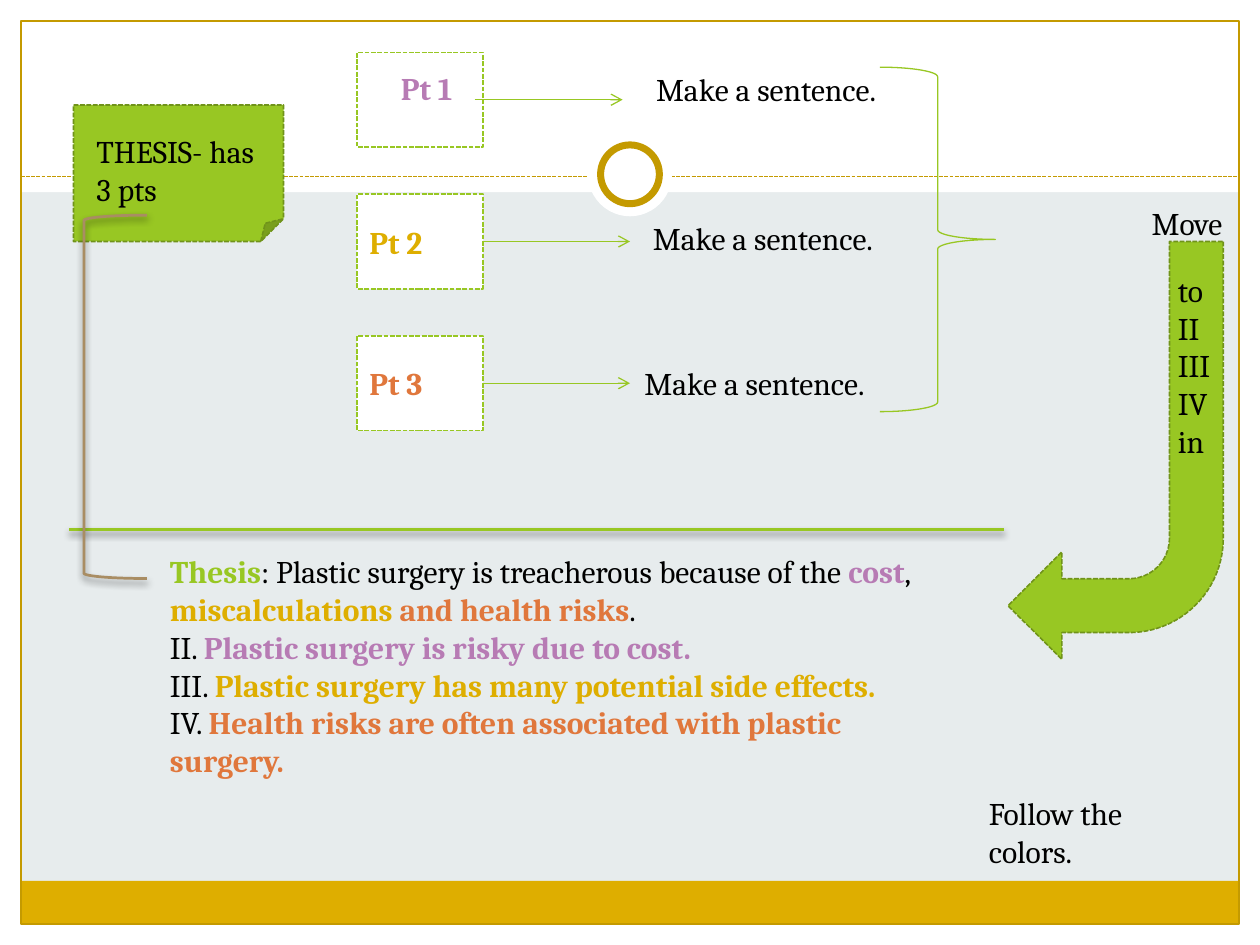
from lxml.etree import SubElement
from pptx import Presentation
from pptx.dml.color import RGBColor
from pptx.enum.dml import MSO_LINE
from pptx.enum.shapes import MSO_CONNECTOR, MSO_SHAPE as SHAPE
from pptx.enum.text import MSO_ANCHOR as ANCHOR, MSO_AUTO_SIZE as AUTO_SIZE, PP_ALIGN
from pptx.oxml.ns import qn
from pptx.util import Emu, Pt

EMU_PER_PX = 7620
FONT = "Cambria"
BLACK, WHITE, PALE = "000000", "FFFFFF", "E7ECED"
GREEN, DARK_GREEN, TAN = "98C723", "70931A", "A98D63"
GOLD, DARK_GOLD = "DEAE00", "C49A00"
PURPLE, ORANGE = "B77BB4", "E0773C"


def px(length):
    return Emu(length * EMU_PER_PX)


def colour(code):
    return RGBColor.from_string(code)


def style_line(line, code, width, dashed=False):
    line.color.rgb = colour(code)
    line.width = Pt(width)
    if dashed:
        line.dash_style = MSO_LINE.SQUARE_DOT


def add_soft_shadow(effects):
    shadow = SubElement(effects, qn("a:outerShdw"), blurRad=str(Pt(4)), dist=str(Pt(2)),
                        dir="5400000", rotWithShape="0")
    black = SubElement(shadow, qn("a:srgbClr"), val=BLACK)
    SubElement(black, qn("a:alpha"), val="45000")


def add_figure(slide, kind, box, fill=None, line=None, width=0.75, dashed=False,
               rotation=0, shadow=False):
    figure = slide.shapes.add_shape(kind, *map(px, box))
    figure.rotation = rotation
    if fill:
        figure.fill.solid()
        figure.fill.fore_color.rgb = colour(fill)
    else:
        figure.fill.background()
    if line:
        style_line(figure.line, line, width, dashed)
    else:
        figure.line.fill.background()
    figure.shadow.inherit = False
    if shadow:
        add_soft_shadow(figure._element.spPr.find(qn("a:effectLst")))
    return figure


def add_rule(slide, left, right, y, code, width=0.75, dashed=False, arrow=False, shadow=False):
    rule = slide.shapes.add_connector(MSO_CONNECTOR.STRAIGHT, px(left), px(y), px(right), px(y))
    style_line(rule.line, code, width, dashed)
    if arrow:
        SubElement(rule.line._get_or_add_ln(), qn("a:tailEnd"), type="arrow")
    effects = SubElement(rule._element.spPr, qn("a:effectLst"))
    if shadow:
        add_soft_shadow(effects)


def write(frame, paragraphs, size=18, anchor=ANCHOR.TOP):
    frame.word_wrap = True
    frame.vertical_anchor = anchor
    for index, pieces in enumerate(paragraphs):
        paragraph = frame.paragraphs[0] if index == 0 else frame.add_paragraph()
        paragraph.alignment = PP_ALIGN.LEFT
        for words, code in pieces:
            if words == "\n":
                paragraph.add_line_break()
                continue
            run = paragraph.add_run()
            run.text = words
            run.font.name = FONT
            run.font.size = Pt(size)
            run.font.bold = code != BLACK
            run.font.color.rgb = colour(code)


def add_text(slide, box, *paragraphs):
    frame = slide.shapes.add_textbox(*map(px, box)).text_frame
    write(frame, paragraphs)
    frame.auto_size = AUTO_SIZE.SHAPE_TO_FIT_TEXT


def add_backdrop(slide):
    slide.background.fill.solid()
    slide.background.fill.fore_color.rgb = colour(PALE)
    margins = [(0, 880, 1200, 20), (0, 0, 1200, 183), (0, 0, 20, 900), (1180, 0, 20, 900)]
    for margin in margins:
        add_figure(slide, SHAPE.RECTANGLE, margin, fill=WHITE)
    add_figure(slide, SHAPE.RECTANGLE, (20, 839, 1160, 41), fill=GOLD)
    add_figure(slide, SHAPE.RECTANGLE, (20, 20, 1160, 860), line=DARK_GOLD)
    add_rule(slide, 20, 1180, 168, DARK_GOLD, dashed=True)
    add_figure(slide, SHAPE.OVAL, (560, 126, 80, 80), fill=WHITE)
    add_figure(slide, SHAPE.OVAL, (572, 138, 56, 56), fill=WHITE, line=DARK_GOLD, width=4)


def add_points(slide):
    box_height, pitch = 90, 135
    points = [
        ("Pt 1", PURPLE, 452, 593, (613, 61)),
        ("Pt 2", GOLD, 460, 600, (610, 203)),
        ("Pt 3", ORANGE, 460, 600, (602, 341)),
    ]
    for index, (label, code, start, end, sentence_at) in enumerate(points):
        top = 50 + index * pitch
        point = add_figure(slide, SHAPE.RECTANGLE, (340, top, 120, box_height),
                           fill=WHITE, line=GREEN, width=0.9, dashed=True)
        if index == 0:
            add_text(slide, (370, 60, 130, 48), [(label, code)])
        else:
            write(point.text_frame, [[(label, code)]], anchor=ANCHOR.MIDDLE)
        add_rule(slide, start, end, top + box_height // 2, GREEN, arrow=True)
        add_text(slide, (*sentence_at, 450, 48), [("Make a sentence.", BLACK)])
    add_figure(slide, SHAPE.LEFT_BRACE, (838, 64, 110, 328), line=GREEN, rotation=180)


def add_move_arrow(slide):
    add_figure(slide, SHAPE.BENT_ARROW, (960, 230, 205, 398), fill=GREEN, line=DARK_GREEN,
               width=0.9, dashed=True, rotation=180)
    add_text(slide, (1085, 188, 110, 48), [("Move", BLACK)])
    add_text(slide, (1110, 252, 70, 230),
             *[[(words, BLACK)] for words in ("to II", "III IV", "in")])


def add_example(slide):
    add_rule(slide, 66, 956, 504, GREEN, width=1.57, shadow=True)
    add_text(
        slide, (150, 520, 743, 266),
        [("Thesis", GREEN), (": Plastic surgery is treacherous because of the ", BLACK),
         ("cost", PURPLE), (", ", BLACK), ("miscalculations ", GOLD),
         ("and health risks", ORANGE), (".", BLACK)],
        [("II. ", BLACK), ("Plastic surgery is risky due to cost. ", PURPLE), ("\n", BLACK),
         ("III. ", BLACK), ("Plastic surgery has many potential side effects.", GOLD)],
        [("IV. ", BLACK),
         ("Health risks are often associated with plastic surgery.", ORANGE)],
    )
    add_figure(slide, SHAPE.LEFT_BRACKET, (80, 205, 60, 346), line=TAN, width=1.57, shadow=True)
    add_text(slide, (930, 750, 235, 85), [("Follow the colors.", BLACK)])


def main():
    deck = Presentation()
    deck.slide_width, deck.slide_height = px(1200), px(900)
    slide = deck.slides.add_slide(deck.slide_layouts[6])
    add_backdrop(slide)
    add_figure(slide, SHAPE.FOLDED_CORNER, (70, 100, 200, 130), fill=GREEN, line=DARK_GREEN,
               width=0.9, dashed=True)
    add_text(slide, (80, 120, 180, 85), [("THESIS- has 3 pts", BLACK)])
    add_points(slide)
    add_move_arrow(slide)
    add_example(slide)
    deck.save("out.pptx")


if __name__ == "__main__":
    main()
